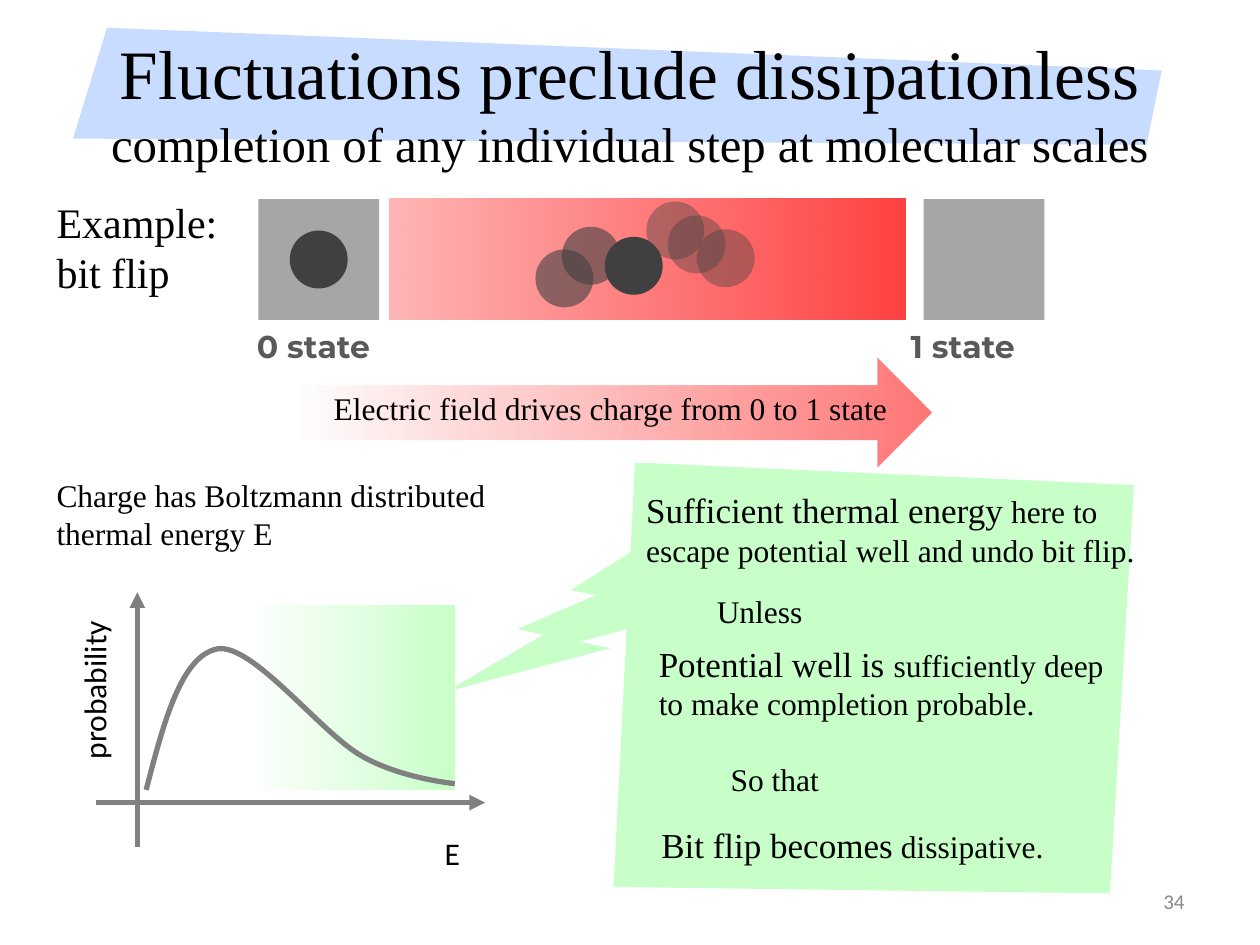
from lxml import etree
from pptx import Presentation
from pptx.dml.color import RGBColor
from pptx.enum.shapes import MSO_CONNECTOR, MSO_SHAPE
from pptx.enum.text import MSO_ANCHOR, MSO_AUTO_SIZE, PP_ALIGN
from pptx.oxml.ns import qn
from pptx.util import Inches, Pt

RECT, OVAL = MSO_SHAPE.RECTANGLE, MSO_SHAPE.OVAL
ARROW, BOLT = MSO_SHAPE.RIGHT_ARROW, MSO_SHAPE.LIGHTNING_BOLT
STRAIGHT = MSO_CONNECTOR.STRAIGHT
CENTER, RIGHT = PP_ALIGN.CENTER, PP_ALIGN.RIGHT
MIDDLE, TOP = MSO_ANCHOR.MIDDLE, MSO_ANCHOR.TOP
GROW, FIXED = MSO_AUTO_SIZE.SHAPE_TO_FIT_TEXT, MSO_AUTO_SIZE.NONE

COLORS = {
    "blue": "C8DCFF", "green": "C8FFC8", "pale_green": "E7FFE7",
    "red": "FF0000", "cell": "A6A6A6", "charge": "404040",
    "axis": "808080", "label": "595959", "number": "898989",
    "black": "000000", "white": "FFFFFF",
}
SERIF = {"name": "Times New Roman", "size": 18, "color": "black"}
SERIF_LARGE = {**SERIF, "size": 20}
SANS = {**SERIF, "name": "Calibri"}
STATE = {"name": "Montserrat", "size": 18, "color": "label", "bold": True}
CELL = 0.96
CHARGE = 0.46


def rgb(name):
    return RGBColor.from_string(COLORS[name])


def box(x, y, w, h):
    return [Inches(v) for v in (x, y, w, h)]


def add_alpha(color, opacity):
    etree.SubElement(color, qn("a:alpha"), val=str(opacity * 1000))


def style_shape(sp, color, opacity=100):
    sp.shadow.inherit = False
    sp.line.fill.background()
    sp.fill.solid()
    sp.fill.fore_color.rgb = rgb(color)
    if opacity < 100:
        add_alpha(sp._element.spPr.find(".//" + qn("a:srgbClr")), opacity)


def add_shape(s, kind, at, color, opacity=100):
    sp = s.shapes.add_shape(kind, *box(*at))
    style_shape(sp, color, opacity)
    return sp


def add_gradient_shape(s, kind, at, stops):
    """Stops are (position, color, opacity), running from right to left."""
    sp = add_shape(s, kind, at, stops[0][1])
    sp.fill.gradient()
    sp.fill.gradient_angle = 180
    stop_list = sp._element.spPr.find(".//" + qn("a:gsLst"))
    for old in list(stop_list):
        stop_list.remove(old)
    for position, color, opacity in stops:
        stop = etree.SubElement(stop_list, qn("a:gs"), pos=str(position * 1000))
        clr = etree.SubElement(stop, qn("a:srgbClr"), val=COLORS[color])
        if opacity < 100:
            add_alpha(clr, opacity)


def add_outline(s, points, close=True):
    pts = [(Inches(x), Inches(y)) for x, y in points]
    builder = s.shapes.build_freeform(*pts[0], scale=1.0)
    builder.add_line_segments(pts[1:], close=close)
    return builder.convert_to_shape()


def add_curve(s, points, color, width):
    """Start point, then two control points and an end point per segment."""
    sp = add_outline(s, points, close=False)
    sp.shadow.inherit = False
    sp.fill.background()
    sp.line.color.rgb = rgb(color)
    sp.line.width = Pt(width)
    path = sp._element.spPr.find(".//" + qn("a:path"))
    steps = path.findall(qn("a:lnTo"))
    for i in range(0, len(steps), 3):
        bezier = etree.SubElement(path, qn("a:cubicBezTo"))
        for step in steps[i:i + 3]:
            bezier.append(step[0])
            path.remove(step)


def add_axis(s, start, end):
    line = s.shapes.add_connector(STRAIGHT, *box(*start, *end))
    line.line.color.rgb = rgb("axis")
    line.line.width = Pt(3)
    etree.SubElement(line.line._get_or_add_ln(), qn("a:tailEnd"), type="triangle")
    etree.SubElement(line._element.spPr, qn("a:effectLst"))


def add_text(s, at, runs, wrap=False, align=None, anchor=TOP, fit=GROW):
    sp = s.shapes.add_textbox(*box(*at))
    tf = sp.text_frame
    frame_format = {"word_wrap": wrap, "auto_size": fit, "vertical_anchor": anchor}
    for key, value in frame_format.items():
        setattr(tf, key, value)
    p = tf.paragraphs[0]
    p.alignment = align
    for text, font in runs:
        r = p.add_run()
        r.text = text
        for key, value in font.items():
            if key == "color":
                r.font.color.rgb = rgb(value)
            else:
                setattr(r.font, key, Pt(value) if key == "size" else value)
    return sp


def add_title(s):
    style_shape(add_outline(s, [(0.85, 0.22), (9.22, 0.56), (9.1, 1.15), (0.58, 1.1)]),
                "blue")
    add_text(s, (0.69, 0.26, 8.62, 1.09),
             [("Fluctuations preclude dissipationless ", {**SERIF, "size": 39.6}),
              ("completion of any individual step at molecular scales",
               {**SERIF, "size": 27.9})],
             wrap=True, align=CENTER, anchor=MIDDLE, fit=FIXED)
    add_text(s, (7.17, 6.95, 2.33, 0.4),
             [("34", {**SANS, "size": 12, "color": "number"})],
             wrap=True, align=RIGHT, anchor=MIDDLE, fit=FIXED)


def add_bit_flip(s):
    add_text(s, (0.35, 1.51, 1.48, 0.91),
             [("Example: bit flip", {**SERIF, "size": 24})], wrap=True)
    # The two states and the path between them
    for cell_x, label_x, label in ((2.05, 1.94, "0 state"), (7.33, 7.13, "1 state")):
        add_shape(s, RECT, (cell_x, 1.58, CELL, CELL), "cell")
        add_text(s, (label_x, 2.55, 1.17, 0.4), [(label, STATE)])
    add_gradient_shape(s, RECT, (3.09, 1.58, 4.1, CELL),
                       [(0, "red", 75), (100, "red", 29)])
    # Charge at rest, in transit and at its fluctuating positions
    for x, y, opacity in ((4.8, 1.88, 100), (2.3, 1.83, 100),
                          (4.25, 1.98, 60), (4.46, 1.8, 60),
                          (5.13, 1.6, 40), (5.3, 1.71, 40), (5.53, 1.82, 40)):
        add_shape(s, OVAL, (x, y, CHARGE, CHARGE), "charge", opacity)
    # Driving field
    add_gradient_shape(s, ARROW, (2.3, 2.84, 5.09, 0.87),
                       [(0, "red", 54), (99, "red", 0)])
    add_text(s, (2.55, 3.04, 4.64, 0.4),
             [("Electric field drives charge from 0 to 1 state", SERIF)])


def add_energy_plot(s):
    add_gradient_shape(s, RECT, (1.97, 4.8, 1.64, 1.47),
                       [(0, "green", 100), (57, "pale_green", 100), (100, "white", 100)])
    add_text(s, (0.35, 3.73, 4.32, 0.71),
             [("Charge has Boltzmann distributed thermal energy E", SERIF)], wrap=True)
    add_axis(s, (0.76, 6.37), (3.85, 6.37))
    add_axis(s, (1.09, 6.72), (1.09, 4.7))
    add_text(s, (0.09, 5.27, 1.31, 0.4), [("probability", SANS)]).rotation = 270
    add_text(s, (3.43, 6.57, 0.36, 0.4), [("E", SANS)])
    add_curve(s, [(1.16, 6.27), (1.3, 5.73), (1.44, 5.2), (1.73, 5.15),
                  (2.01, 5.11), (2.55, 5.82), (2.87, 6),
                  (3.18, 6.18), (3.61, 6.22), (3.61, 6.22)], "axis", 3)


def add_conclusion(s):
    bolt = add_shape(s, BOLT, (3.54, 4.37, 2.44, 1.12), "green")
    bolt._element.spPr.find(qn("a:xfrm")).set("flipH", "1")
    style_shape(add_outline(s, [(5.04, 3.67), (9, 3.85), (8.81, 7.09), (4.87, 7.04)]),
                "green")
    # Each claim opens in larger type
    for at, lead, rest, wrap in (
            ((5.03, 3.83, 4.4, 0.74), "Sufficient thermal energy",
             " here to escape potential well and undo bit flip.", True),
            ((5.13, 5.05, 3.78, 0.74), "Potential well is ",
             "sufficiently deep to make completion probable.", True),
            ((5.15, 6.49, 3.26, 0.44), "Bit flip becomes", " dissipative.", False)):
        add_text(s, at, [(lead, SERIF_LARGE), (rest, SERIF)], wrap=wrap)
    add_text(s, (5.59, 4.65, 0.89, 0.4), [("Unless", SERIF)])
    add_text(s, (5.7, 5.98, 0.91, 0.4), [("So that", SERIF)])


def main():
    prs = Presentation()
    prs.slide_width, prs.slide_height = Inches(10), Inches(7.5)
    s = prs.slides.add_slide(prs.slide_layouts[6])
    add_title(s)
    add_bit_flip(s)
    add_energy_plot(s)
    add_conclusion(s)
    prs.save("out.pptx")


if __name__ == "__main__":
    main()
